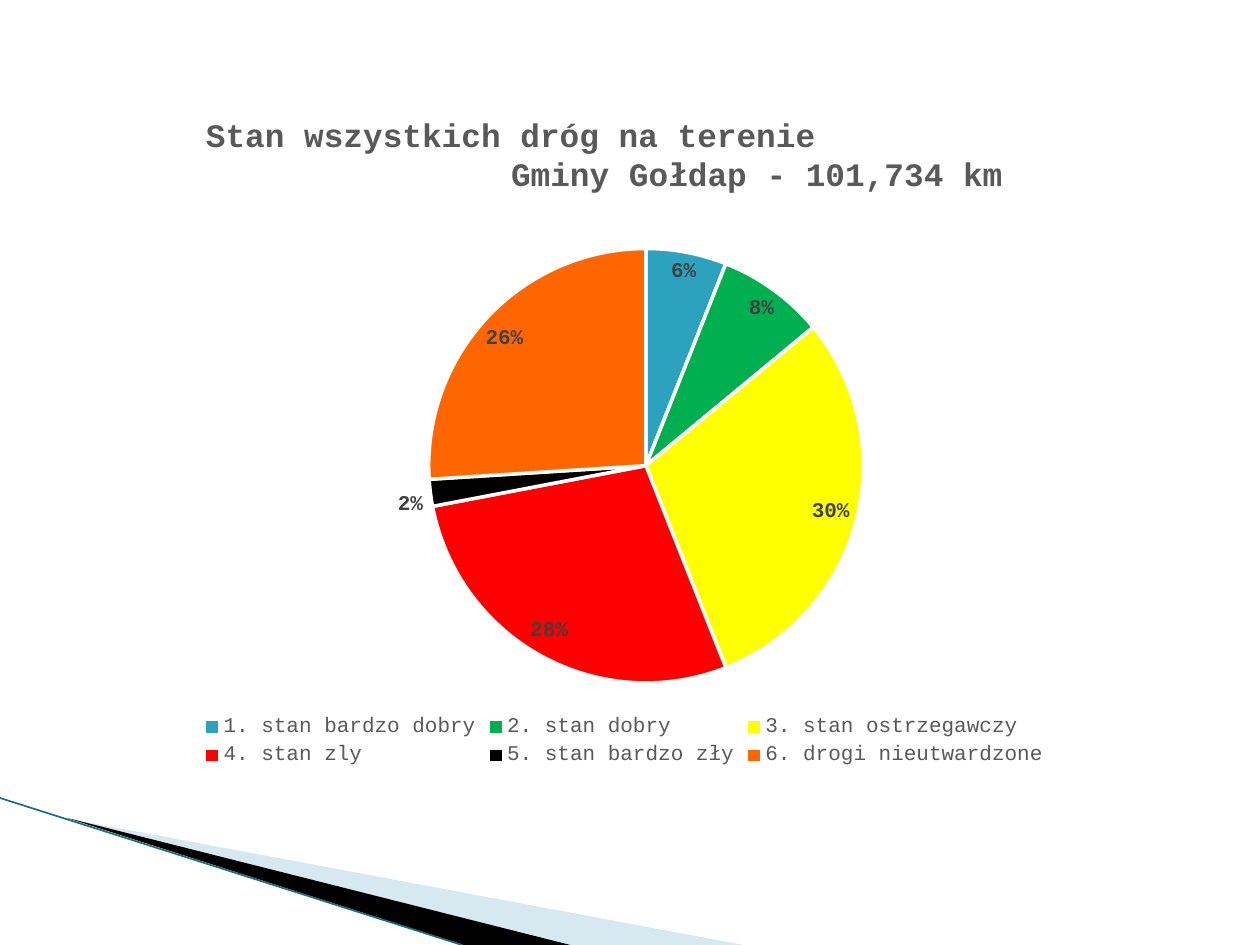
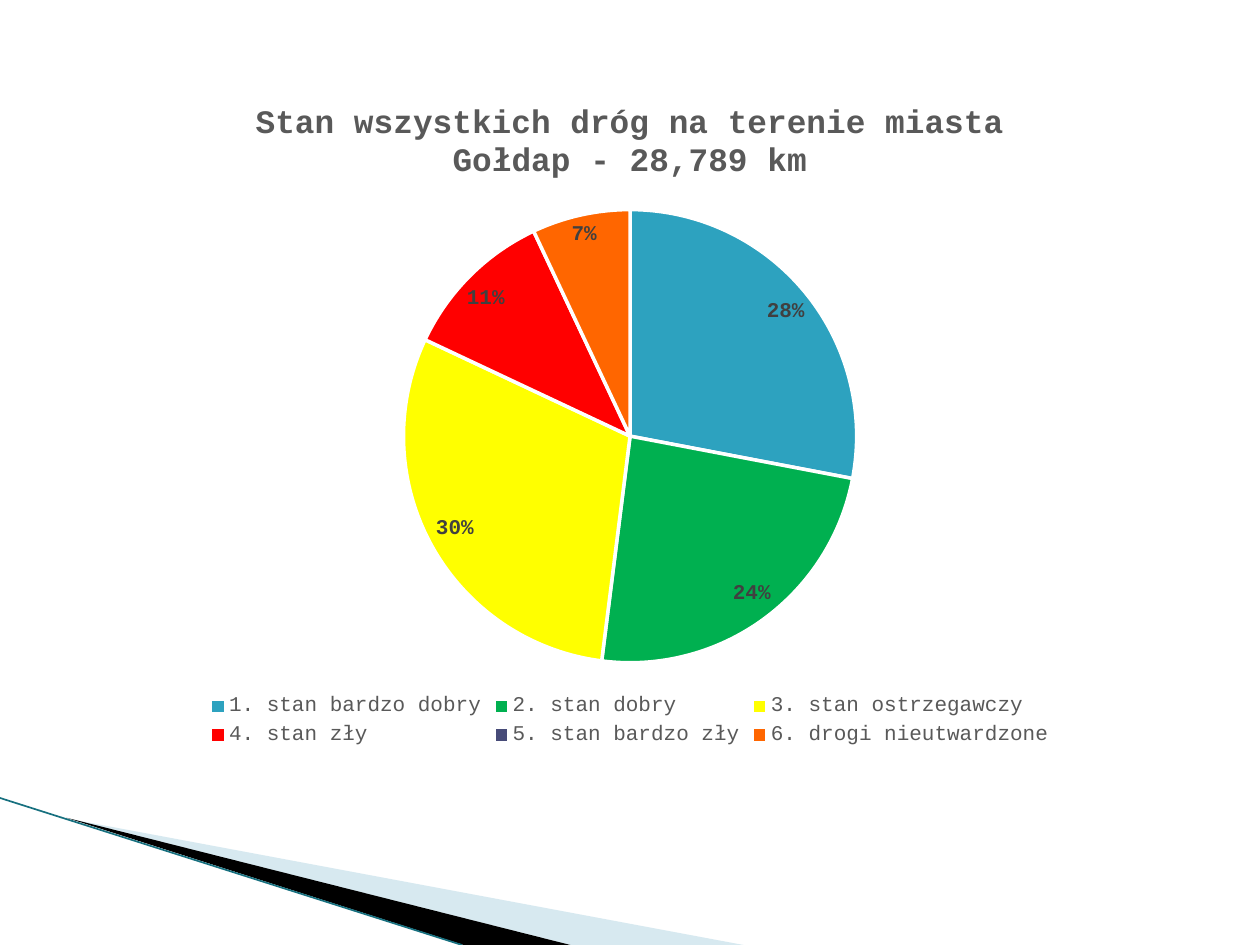
from dataclasses import dataclass
from lxml import etree
from pptx import Presentation
from pptx import util as u
from pptx.chart import data as cd
from pptx.dml import color
from pptx.enum import chart as ce, shapes, text
from pptx.oxml import ns

Pt = u.Pt
LEFT, CENTER, RIGHT = text.PP_ALIGN.LEFT, text.PP_ALIGN.CENTER, text.PP_ALIGN.RIGHT

SLIDES = [
    {
        "title": [("Stan wszystkich dróg na terenie", LEFT),
                  ("Gminy Gołdap - 101,734 km", RIGHT)],
        "shares": [("1. stan bardzo dobry", 0.06), ("2. stan dobry", 0.08),
                   ("3. stan ostrzegawczy", 0.30), ("4. stan zly", 0.28),
                   ("5. stan bardzo zły", 0.02), ("6. drogi nieutwardzone ", 0.26)],
        "very_bad": "000000",
        "frame": (50.4, 49, 620, 392.4),
        "title_box": (117.7, 65.5, 455.2, 46),
        "pie": (245, 142, 248.3),
    },
    {
        "title": [("Stan wszystkich dróg na terenie miasta", CENTER),
                  ("Gołdap - 28,789 km", CENTER)],
        "shares": [("1. stan bardzo dobry", 0.28), ("2. stan dobry", 0.24),
                   ("3. stan ostrzegawczy", 0.30), ("4. stan zły", 0.11),
                   ("5. stan bardzo zły", None), ("6. drogi nieutwardzone", 0.07)],
        "very_bad": "474B78",
        "frame": (84.2, 43.2, 551.5, 386.6),
        "title_at": (143.9, 56.7),
        "pie": (230.6, 119.8, 259),
    },
]


@dataclass(frozen=True)
class Theme:
    font: str = "Courier New"
    title_size: float = 18.7
    label_size: float = 12
    base_size: float = 10
    ink: str = "595959"
    label_ink: str = "404040"
    black: str = "000000"
    white: str = "FFFFFF"
    pale: str = "A0CBDC"
    edge: str = "17707F"
    slices: tuple = ("2DA2BF", "00B050", "FFFF00", "FF0000", None, "FF6600")


T = Theme()
WIDTH, HEIGHT = 720, 540
WEDGES = [
    ([(39.6, 468), (424.8, HEIGHT), (326, HEIGHT)], T.pale, 42),
    ([(38, 467.3), (326, HEIGHT), (265, HEIGHT)], T.black, 100),
]
EDGE = (0, 456, 264, HEIGHT)


def rgb(code):
    return color.RGBColor.from_string(code)


def style(font, size, ink, bold=False):
    font.name, font.size, font.bold = T.font, Pt(size), bold
    font.color.rgb = rgb(ink)


def add_corner(s):
    for points, fill, alpha in WEDGES:
        corners = [(Pt(x), Pt(y)) for x, y in points]
        fb = s.shapes.build_freeform(*corners[0], scale=1.0)
        fb.add_line_segments(corners[1:], close=True)
        sp = fb.convert_to_shape()
        sp.shadow.inherit = False
        sp.fill.solid()
        sp.fill.fore_color.rgb = rgb(fill)
        sp.line.fill.background()
        if alpha < 100:
            clr = sp._element.spPr.find(".//" + ns.qn("a:srgbClr"))
            etree.SubElement(clr, ns.qn("a:alpha")).set("val", str(alpha * 1000))
    edge = s.shapes.add_connector(shapes.MSO_CONNECTOR.STRAIGHT, *map(Pt, EDGE))
    edge.line.color.rgb = rgb(T.edge)
    edge.line.width = Pt(0.95)
    etree.SubElement(edge._element.spPr, ns.qn("a:effectLst"))


def set_layout(parent, index, frame, x, y, size=None):
    left, top, width, height = frame
    old = parent.find(ns.qn("c:layout"))
    if old is not None:
        parent.remove(old)
    layout = etree.Element(ns.qn("c:layout"))
    manual = etree.SubElement(layout, ns.qn("c:manualLayout"))
    settings = [("xMode", "edge"), ("yMode", "edge"),
                ("x", (x - left) / width), ("y", (y - top) / height)]
    if size:
        settings.insert(0, ("layoutTarget", "inner"))
        settings += [("w", size / width), ("h", size / height)]
    for tag, value in settings:
        etree.SubElement(manual, ns.qn("c:" + tag)).set("val", str(value))
    parent.insert(index, layout)


def write_title(tf, lines):
    for i, (line, align) in enumerate(lines):
        p = tf.add_paragraph() if i else tf.paragraphs[0]
        p.alignment = align
        r = p.add_run()
        r.text = line
        style(r.font, T.title_size, T.ink, True)


def add_title(s, chart, content):
    chart.has_title = "title_at" in content
    if chart.has_title:
        title = chart.chart_title
        write_title(title.text_frame, content["title"])
        set_layout(title._element, 1, content["frame"], *content["title_at"])
    else:
        tf = s.shapes.add_textbox(*map(Pt, content["title_box"])).text_frame
        tf.word_wrap = True
        tf.margin_left = tf.margin_right = tf.margin_top = tf.margin_bottom = 0
        write_title(tf, content["title"])


def add_pie(s, content):
    data = cd.CategoryChartData(number_format="0%")
    names, values = zip(*content["shares"])
    data.categories = names
    data.add_series("Series 1", values)
    chart = s.shapes.add_chart(
        ce.XL_CHART_TYPE.PIE, *map(Pt, content["frame"]), data).chart
    style(chart.font, T.base_size, T.black)
    add_title(s, chart, content)

    chart.has_legend = True
    chart.legend.position = ce.XL_LEGEND_POSITION.BOTTOM
    chart.legend.include_in_layout = False
    style(chart.legend.font, T.label_size, T.ink)

    plot = chart.plots[0]
    plot.vary_by_categories = True
    series = plot.series[0]
    for i, fill in enumerate(T.slices):
        fmt = series.points[i].format
        fmt.fill.solid()
        fmt.fill.fore_color.rgb = rgb(fill or content["very_bad"])
        fmt.line.color.rgb = rgb(T.white)
        fmt.line.width = Pt(2)

    labels = series.data_labels
    labels.show_value = True
    labels.number_format = "0%"
    labels.number_format_is_linked = False
    labels.position = ce.XL_LABEL_POSITION.BEST_FIT
    style(labels.font, T.label_size, T.label_ink, True)
    plot_area = chart._chartSpace.find(".//" + ns.qn("c:plotArea"))
    set_layout(plot_area, 0, content["frame"], *content["pie"])


def main():
    prs = Presentation()
    prs.slide_width, prs.slide_height = Pt(WIDTH), Pt(HEIGHT)
    for content in SLIDES:
        s = prs.slides.add_slide(prs.slide_layouts[6])
        add_corner(s)
        add_pie(s, content)
    prs.save("out.pptx")


if __name__ == "__main__":
    main()
